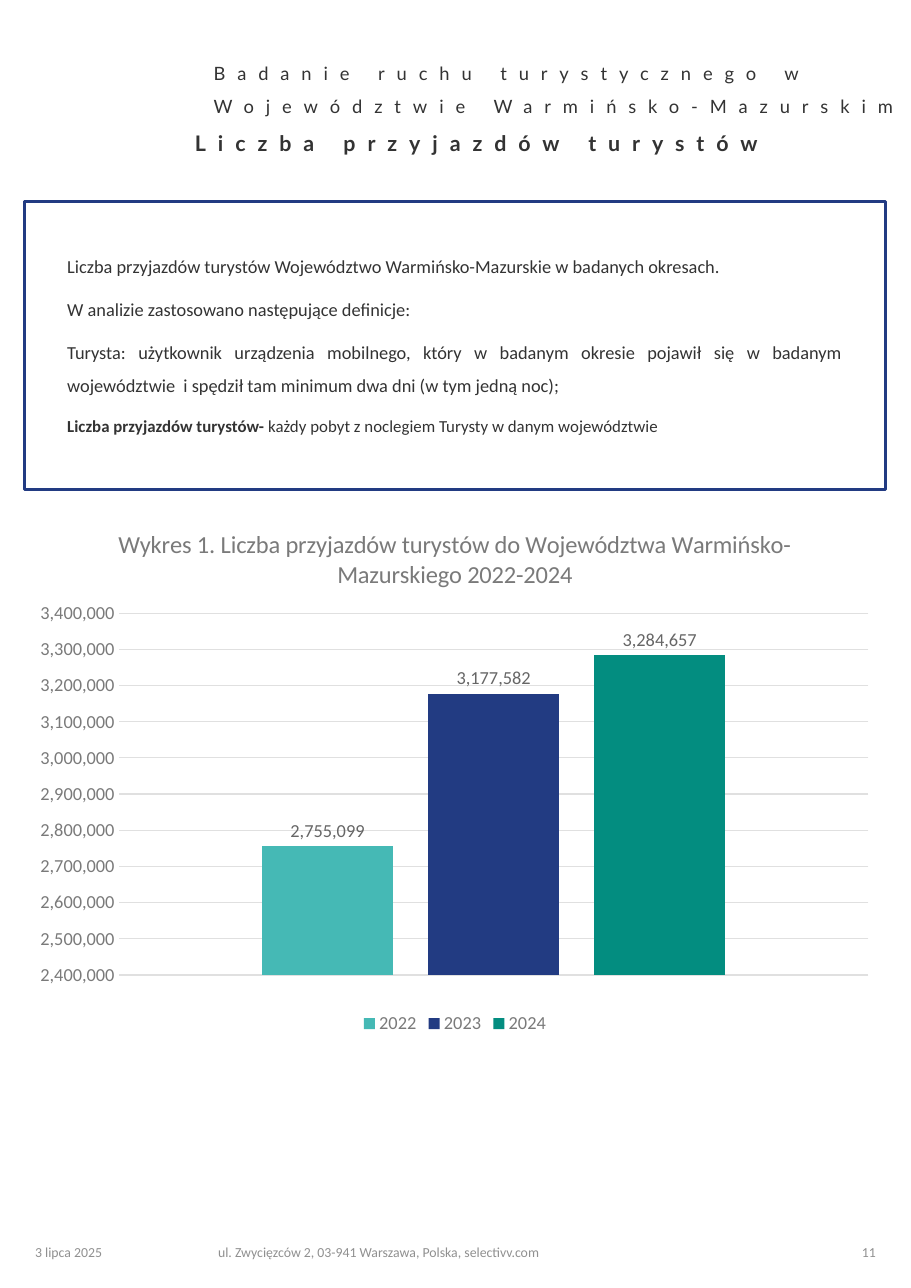
from dataclasses import dataclass

from lxml import etree
from pptx import Presentation
from pptx.chart.data import CategoryChartData
from pptx.dml.color import RGBColor
from pptx.enum.chart import XL_CHART_TYPE, XL_LABEL_POSITION, XL_LEGEND_POSITION, XL_TICK_MARK
from pptx.enum.shapes import MSO_SHAPE
from pptx.enum.text import MSO_ANCHOR, PP_ALIGN
from pptx.oxml.ns import qn
from pptx.util import Inches, Pt

LEFT, MID, RIGHT, FULL = PP_ALIGN.LEFT, PP_ALIGN.CENTER, PP_ALIGN.RIGHT, PP_ALIGN.JUSTIFY
TOP, CENTER, BOTTOM = MSO_ANCHOR.TOP, MSO_ANCHOR.MIDDLE, MSO_ANCHOR.BOTTOM
RECT = MSO_SHAPE.RECTANGLE
COLUMN = XL_CHART_TYPE.COLUMN_CLUSTERED
ABOVE = XL_LABEL_POSITION.OUTSIDE_END
BELOW = XL_LEGEND_POSITION.BOTTOM
NO_TICK = XL_TICK_MARK.NONE


@dataclass(frozen=True)
class Theme:
    head: str = "Lato"
    body: str = "Calibri"
    ink: str = "333333"
    navy: str = "223B82"
    teal: str = "45B9B5"
    green: str = "038D80"
    axis: str = "7A7A7A"
    label: str = "666666"
    grid: str = "E0E0E0"
    foot: str = "909090"
    small: int = 9
    note: int = 11
    text: int = 12
    title: int = 14
    caption: int = 16
    track: int = 780


T = Theme()


def rgb(code):
    return RGBColor.from_string(code)


def style(font, size, color, name=T.body, bold=None):
    font.size = Pt(size)
    font.name = name
    font.color.rgb = rgb(color)
    font.bold = bold


def frame(shape, anchor, pads=(0.1, 0.05, 0.1, 0.05)):
    area = shape.text_frame
    area.word_wrap = True
    area.vertical_anchor = anchor
    area.margin_left, area.margin_top, area.margin_right, area.margin_bottom = map(Inches, pads)
    return area


def add_text(slide, box, anchor, pads=(0.1, 0.05, 0.1, 0.05)):
    return frame(slide.shapes.add_textbox(*map(Inches, box)), anchor, pads)


def add_head(slide, box):
    x, y, w, h = box
    lines = (
        ("Badanie ruchu turystycznego w Województwie Warmińsko-Mazurskim",
         x + 0.17, y, BOTTOM, T.text, None),
        ("Liczba przyjazdów turystów", x, y + h / 2, TOP, T.title, True),
    )
    for text, left, top, anchor, size, bold in lines:
        area = add_text(slide, (left, top, w, h / 2), anchor, (0, 0, 0, 0))
        para = area.paragraphs[0]
        run = para.add_run()
        run.text = text
        run._r.get_or_add_rPr().set("spc", str(T.track))
        para.line_spacing = 1.5
        style(para.font, size, T.ink, T.head, bold)


def add_note(slide, box):
    shape = slide.shapes.add_shape(RECT, *map(Inches, box))
    shape.shadow.inherit = False
    shape.fill.background()
    shape.line.color.rgb = rgb(T.navy)
    shape.line.width = Pt(2)
    area = frame(shape, TOP, (0.39, 0.39, 0.39, 0.2))
    items = (
        (FULL, T.text, [("Liczba przyjazdów turystów Województwo Warmińsko-Mazurskie w badanych okresach.", None)]),
        (FULL, T.text, [("W analizie zastosowano następujące definicje:", None)]),
        (FULL, T.text, [("Turysta: użytkownik urządzenia mobilnego, który w badanym okresie pojawił się w badanym "
                         "województwie  i spędził tam minimum dwa dni (w tym jedną noc);", None)]),
        (LEFT, T.note, [("Liczba przyjazdów turystów- ", True),
                        ("każdy pobyt z noclegiem Turysty w danym województwie", None)]),
    )
    for i, (align, size, parts) in enumerate(items):
        para = area.add_paragraph() if i else area.paragraphs[0]
        for text, bold in parts:
            run = para.add_run()
            run.text = text
            if bold:
                run.font.bold = True
        para.alignment = align
        para.line_spacing = 1.5
        para.space_before = Pt(6.2 if i else 0)
        style(para.font, size, T.ink)


def set_plot(chart, box):
    area = chart._chartSpace.chart.plotArea
    for old in area.findall(qn("c:layout")):
        area.remove(old)
    layout = etree.Element(qn("c:layout"))
    area.insert(0, layout)
    manual = etree.SubElement(layout, qn("c:manualLayout"))
    pairs = [("layoutTarget", "inner"), ("xMode", "edge"), ("yMode", "edge")]
    pairs += zip("xywh", map(str, box))
    for tag, val in pairs:
        etree.SubElement(manual, qn("c:" + tag)).set("val", val)


def add_graph(slide, box):
    rows = (("2022", 2755099, T.teal), ("2023", 3177582, T.navy), ("2024", 3284657, T.green))
    data = CategoryChartData(number_format="#,##0")
    data.categories = ["1"]
    for name, value, _ in rows:
        data.add_series(name, [value])
    chart = slide.shapes.add_chart(COLUMN, *map(Inches, box), data).chart
    style(chart.font, 10, T.ink)
    chart.has_title = True
    para = chart.chart_title.text_frame.paragraphs[0]
    para.text = "Wykres 1. Liczba przyjazdów turystów do Województwa Warmińsko-Mazurskiego 2022-2024"
    style(para.font, T.caption, T.axis, bold=False)
    chart.chart_title.include_in_layout = False
    chart.has_legend = True
    chart.legend.position = BELOW
    chart.legend.include_in_layout = False
    style(chart.legend.font, T.text, T.axis)
    chart.category_axis.visible = False
    axis = chart.value_axis
    axis.minimum_scale, axis.maximum_scale, axis.major_unit = 2400000, 3400000, 100000
    axis.major_tick_mark = axis.minor_tick_mark = NO_TICK
    axis.format.line.fill.background()
    axis.major_gridlines.format.line.color.rgb = rgb(T.grid)
    axis.major_gridlines.format.line.width = Pt(0.75)
    axis.tick_labels.number_format = "#,##0"
    axis.tick_labels.number_format_is_linked = False
    style(axis.tick_labels.font, T.text, T.axis)
    plot = chart.plots[0]
    plot.vary_by_categories = False
    plot.gap_width, plot.overlap = 219, -27
    for series, (_, _, color) in zip(plot.series, rows):
        series.format.fill.solid()
        series.format.fill.fore_color.rgb = rgb(color)
        labels = series.data_labels
        labels.show_value = True
        labels.position = ABOVE
        labels.number_format = "#,##0"
        labels.number_format_is_linked = False
        style(labels.font, T.text, T.label)
    set_plot(chart, (0.11, 0.2, 0.87, 0.68))


def add_foot(slide, box):
    x, y, w, h = box
    parts = (
        ("3 lipca 2025", x, 1.09, LEFT),
        ("ul. Zwycięzców 2, 03-941 Warszawa, Polska, selectivv.com", x + 1.32, 3.79, MID),
        ("11", x + w - 0.57, 0.57, RIGHT),
    )
    for text, left, width, align in parts:
        para = add_text(slide, (left, y, width, h), CENTER).paragraphs[0]
        para.text = text
        para.alignment = align
        style(para.font, T.small, T.foot)


def main():
    deck = Presentation()
    deck.slide_width, deck.slide_height = Inches(8.27), Inches(11.69)
    slide = deck.slides.add_slide(deck.slide_layouts[6])
    add_foot(slide, (0.22, 11.15, 7.83, 0.43))
    add_head(slide, (1.77, 0.4, 6.27, 1.33))
    add_graph(slide, (0.22, 4.6, 7.82, 4.83))
    add_note(slide, (0.22, 1.83, 7.82, 2.61))
    deck.save("out.pptx")


if __name__ == "__main__":
    main()
